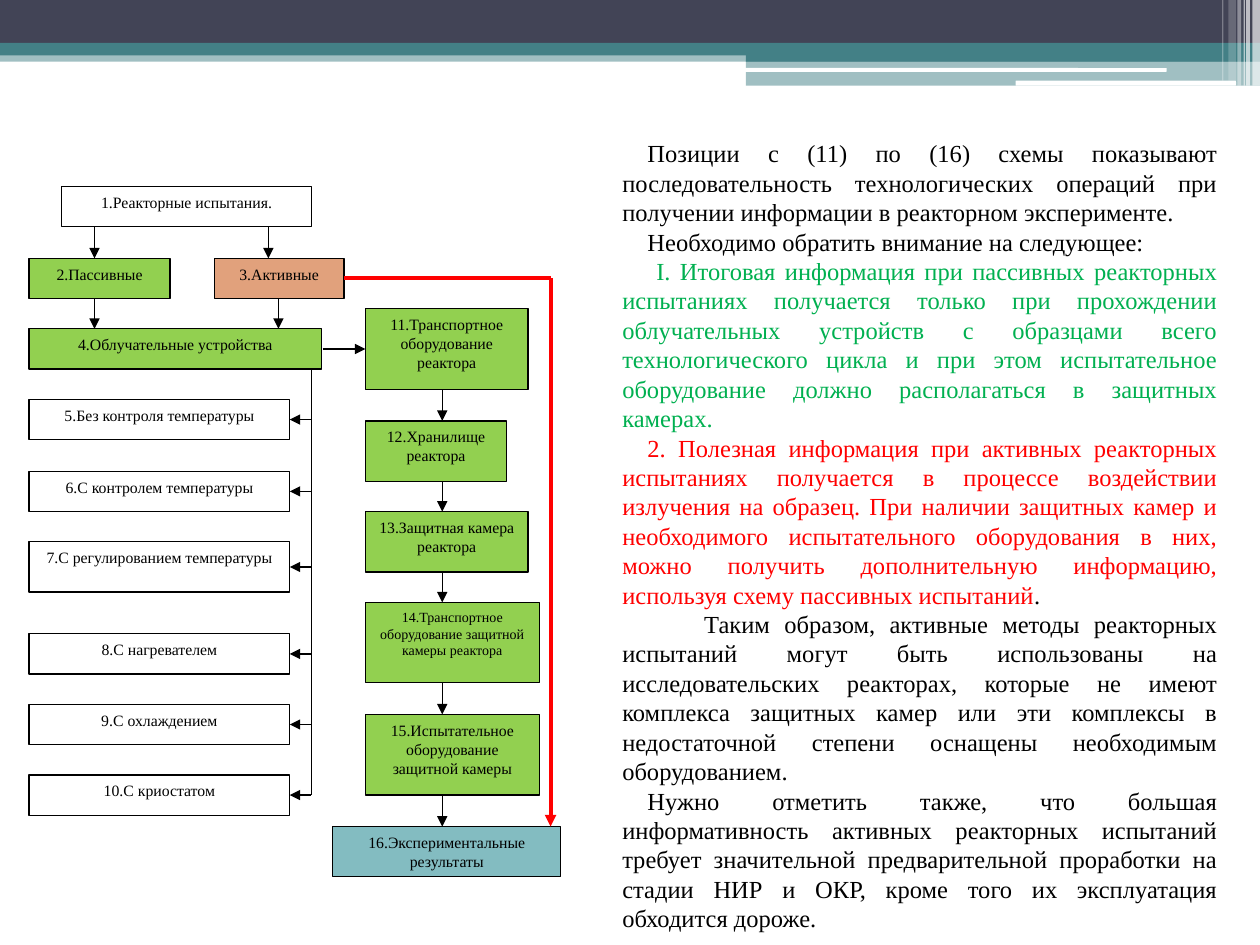
from lxml.etree import SubElement
from pptx import Presentation
from pptx.dml.color import RGBColor
from pptx.enum.shapes import MSO_CONNECTOR, MSO_SHAPE
from pptx.enum.text import MSO_ANCHOR, MSO_AUTO_SIZE, PP_ALIGN
from pptx.oxml.ns import qn
from pptx.util import Emu, Pt

PX_PER_INCH = 100
BLACK, WHITE, RED = "000000", "FFFFFF", "FF0000"
TEAL, GREEN, TEXT_GREEN = "438086", "92D050", "00B050"


def px(length):
    return Emu(length * 914400 // PX_PER_INCH)


def color(value):
    return RGBColor.from_string(value)


def assign(target, values):
    for name, value in values.items():
        setattr(target, name, value)


class SlideBuilder:
    font = "Times New Roman"
    line_width = 0.75

    def __init__(self, page):
        self.page = page

    def block(self, left, top, width, height, fill, opacity=100, shape_type=MSO_SHAPE.RECTANGLE):
        shape = self.page.shapes.add_shape(shape_type, px(left), px(top), px(width), px(height))
        shape.shadow.inherit = False
        shape.line.fill.background()
        shape.fill.solid()
        shape.fill.fore_color.rgb = color(fill)
        if opacity < 100:
            tint = shape._element.spPr.find(qn("a:solidFill"))[0]
            SubElement(tint, qn("a:alpha")).set("val", str(opacity * 1000))
        return shape

    def span(self, paragraph, text, size, ink):
        span = paragraph.add_run()
        span.text = text
        assign(span.font, {"name": self.font, "size": Pt(size)})
        span.font.color.rgb = color(ink)

    def step(self, left, top, width, height, text, fill=WHITE, size=9):
        box = self.block(left, top, width, height, fill)
        box.line.color.rgb = color(BLACK)
        box.line.width = Pt(self.line_width)
        assign(box.text_frame, {"word_wrap": True, "vertical_anchor": MSO_ANCHOR.TOP})
        paragraph = box.text_frame.paragraphs[0]
        assign(paragraph, {"alignment": PP_ALIGN.CENTER, "space_after": Pt(10)})
        self.span(paragraph, text, size, BLACK)

    def line(self, start, end, ink=BLACK, width=line_width, arrow=True):
        connector = self.page.shapes.add_connector(
            MSO_CONNECTOR.STRAIGHT, *(px(value) for value in (*start, *end)))
        connector.line.color.rgb = color(ink)
        connector.line.width = Pt(width)
        properties = connector._element.spPr
        if arrow:
            SubElement(properties.find(qn("a:ln")), qn("a:tailEnd")).set("type", "triangle")
        SubElement(properties, qn("a:effectLst"))

    def body(self, left, top, width, height, paragraphs, size):
        box = self.page.shapes.add_textbox(px(left), px(top), px(width), px(height))
        frame = box.text_frame
        assign(frame, {"word_wrap": True, "vertical_anchor": MSO_ANCHOR.MIDDLE,
                       "auto_size": MSO_AUTO_SIZE.SHAPE_TO_FIT_TEXT})
        for index, (indent, spans) in enumerate(paragraphs):
            paragraph = frame.add_paragraph() if index else frame.paragraphs[0]
            paragraph.alignment = PP_ALIGN.JUSTIFY
            for name, value in {"marL": 0, "indent": px(indent)}.items():
                paragraph._p.get_or_add_pPr().set(name, str(int(value)))
            for text, ink in spans:
                self.span(paragraph, text, size, ink)


def draw_header(builder):
    bands = [
        (0, 40, 1000, 9, TEAL, 50),
        (0, 0, 1000, 34, "424456", 100),
        (0, 34, 1000, 10, TEAL, 100),
        (592, 39, 408, 10, TEAL, 100),
        (592, 48, 408, 20, TEAL, 50),
    ]
    for band in bands:
        builder.block(*band)
    for bar in [(591, 54, 335, 3), (806, 64, 175, 4)]:
        builder.block(*bar, WHITE, shape_type=MSO_SHAPE.ROUNDED_RECTANGLE)
    stripes = [(994, 6, 68, 65), (989, 3, 68, 65), (987, 1, 68, 60),
               (982, 3, 68, 40), (975, 6, 64, 20), (970, 1, 64, 30)]
    for left, width, height, opacity in stripes:
        builder.block(left, 0, width, height, WHITE, opacity)


def draw_tests(builder):
    left, width, trunk = 23, 207, 247
    builder.step(49, 148, 198, 32, "1.Реакторные испытания.")
    builder.step(left, 205, 112, 32, "2.Пассивные", GREEN)
    builder.step(170, 205, 103, 32, "3.Активные", "E1A17C")
    builder.step(left, 261, 232, 32, "4.Облучательные устройства", GREEN)
    devices = [
        (317, 32, "5.Без контроля температуры"),
        (374, 32, "6.С контролем температуры"),
        (430, 40, "7.С регулированием температуры"),
        (503, 32, "8.С нагревателем"),
        (559, 32, "9.С охлаждением"),
        (615, 32, "10.С криостатом"),
    ]
    for top, height, text in devices:
        builder.step(left, top, width, height, text)
        middle = top + height // 2
        builder.line((trunk, middle), (left + width, middle))
    builder.line((trunk, 293), (trunk, middle), arrow=False)
    for x, top, bottom in [(75, 180, 205), (213, 180, 205), (75, 237, 261), (221, 237, 261)]:
        builder.line((x, top), (x, bottom))


def draw_operations(builder):
    left, axis, bypass = 290, 351, 437
    operations = [
        (left, 245, 129, 64, "11.Транспортное оборудование реактора", GREEN),
        (left, 334, 112, 48, "12.Хранилище реактора", GREEN),
        (left, 406, 129, 48, "13.Защитная камера реактора", GREEN),
        (left, 478, 138, 64, "14.Транспортное оборудование защитной камеры реактора", GREEN, 8),
        (left, 567, 138, 64, "15.Испытательное оборудование защитной камеры", GREEN),
        (264, 656, 181, 40, "16.Экспериментальные результаты", "83BCC1"),
    ]
    for operation in operations:
        builder.step(*operation)
    for current, following in zip(operations, operations[1:]):
        builder.line((axis, current[1] + current[3]), (axis, following[1]))
    builder.line((256, 277), (left, 277))
    builder.line((273, 221), (bypass, 221), RED, 2.25, arrow=False)
    builder.line((bypass, 221), (bypass, 656), RED, 2.25)


def draw_commentary(builder):
    paragraphs = [
        (20, [("Позиции с (11) по (16) схемы показывают последовательность технологических "
               "операций при получении информации в реакторном эксперименте.", BLACK)]),
        (20, [("Необходимо обратить внимание на следующее:", BLACK)]),
        (27, [("I. Итоговая информация при пассивных реакторных испытаниях получается только "
               "при прохождении облучательных устройств с образцами всего технологического "
               "цикла и при этом испытательное оборудование должно располагаться в защитных "
               "камерах.", TEXT_GREEN)]),
        (20, [("2. Полезная информация при активных реакторных испытаниях получается в процессе "
               "воздействии излучения на образец. При наличии защитных камер и необходимого "
               "испытательного оборудования в них, можно получить дополнительную информацию, "
               "используя схему пассивных испытаний", RED), (".", BLACK)]),
        (65, [("Таким образом, активные методы реакторных испытаний могут быть использованы на "
               "исследовательских реакторах, которые не имеют комплекса защитных камер или эти "
               "комплексы в недостаточной степени оснащены необходимым оборудованием.", BLACK)]),
        (20, [("Нужно отметить также, что большая информативность активных реакторных испытаний "
               "требует значительной предварительной проработки на стадии НИР и ОКР, кроме того "
               "их эксплуатация обходится дороже.", BLACK)]),
    ]
    builder.body(484, 102, 492, 646, paragraphs, 14)


def main():
    deck = Presentation()
    assign(deck, {"slide_width": px(1000), "slide_height": px(750)})
    builder = SlideBuilder(deck.slides.add_slide(deck.slide_layouts[6]))
    draw_header(builder)
    draw_tests(builder)
    draw_operations(builder)
    draw_commentary(builder)
    deck.save("out.pptx")


if __name__ == "__main__":
    main()
